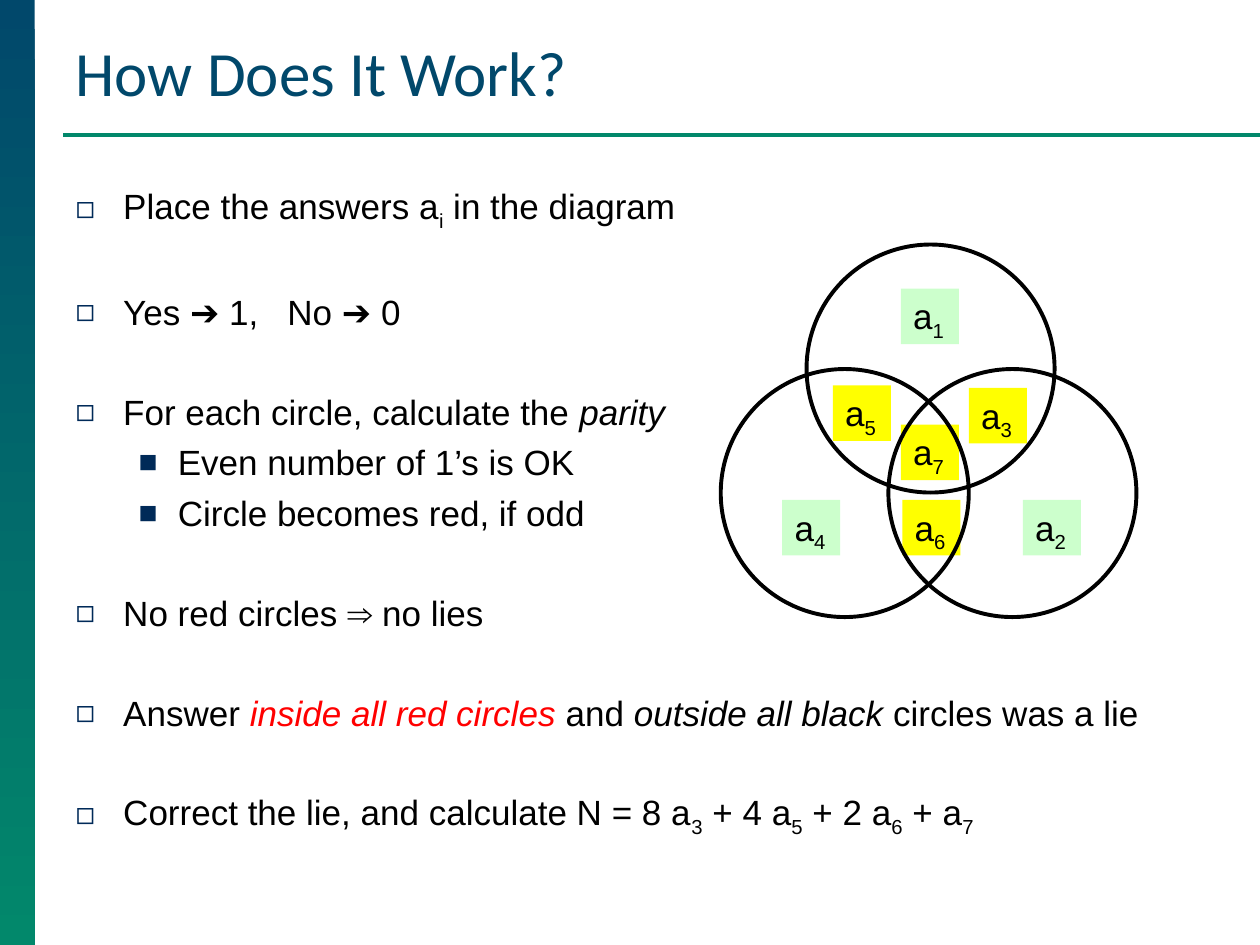
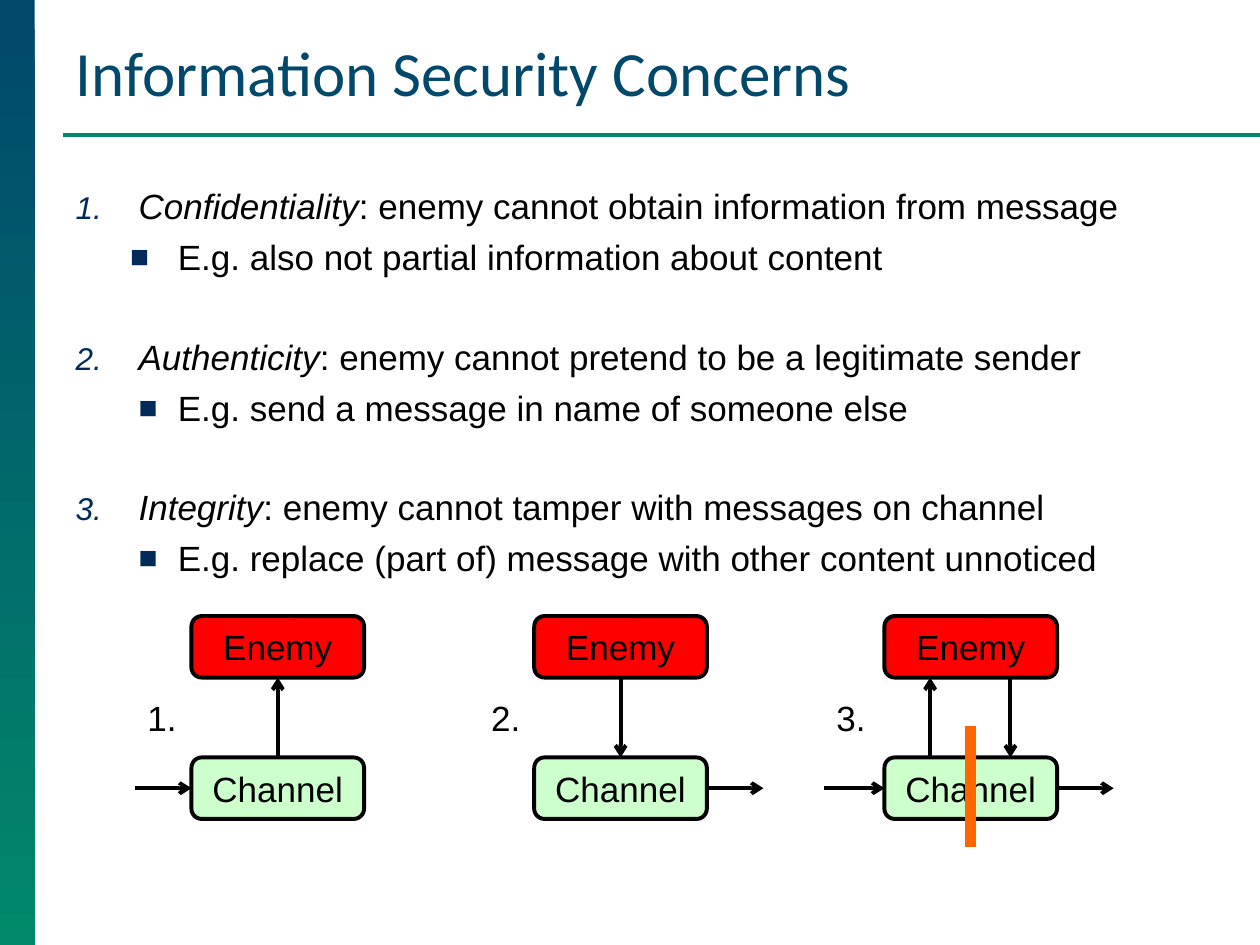
from dataclasses import dataclass

from lxml import etree
from pptx import Presentation
from pptx.dml.color import RGBColor
from pptx.enum.shapes import MSO_CONNECTOR, MSO_SHAPE
from pptx.enum.text import MSO_ANCHOR, MSO_AUTO_SIZE, PP_ALIGN
from pptx.oxml.ns import qn
from pptx.util import Cm, Pt


@dataclass(frozen=True)
class Theme:
    navy: RGBColor = RGBColor.from_string("01486B")
    green: RGBColor = RGBColor.from_string("02886B")
    black: RGBColor = RGBColor.from_string("000000")
    red: RGBColor = RGBColor.from_string("FF0000")
    mint: RGBColor = RGBColor.from_string("CCFFCC")
    yellow: RGBColor = RGBColor.from_string("FFFF00")
    orange: RGBColor = RGBColor.from_string("FF6600")
    bullet: str = "002A58"
    title_font: str = "Calibri"
    text_font: str = "Arial"
    title_size: Pt = Pt(36)
    text_size: Pt = Pt(20)
    line_width: Pt = Pt(2.25)
    row_gap: Pt = Pt(5)
    group_gap: Pt = Pt(33)


theme = Theme()
TOP, LEFT, BOTTOM, RIGHT = range(4)


def write_runs(para, runs):
    """Fill a paragraph with (text, style) pairs; style is "", "sub", "italic" or "red"."""
    para.font.name = theme.text_font
    para.font.size = theme.text_size
    para.font.color.rgb = theme.black
    for text, style in runs:
        span = para.add_run()
        span.text = text
        if style == "sub":
            span.font._element.set("baseline", "-25000")
        elif style:
            span.font.italic = True
        if style == "red":
            span.font.color.rgb = theme.red


def draw_line(page, start, end, color=theme.black, width=theme.line_width, arrow=True):
    """Draw a straight line between two points in centimetres."""
    line = page.shapes.add_connector(
        MSO_CONNECTOR.STRAIGHT, *(Cm(value) for value in (*start, *end)))
    line.line.color.rgb = color
    line.line.width = width
    properties = line._element.spPr
    if arrow:
        etree.SubElement(properties.find(qn("a:ln")), qn("a:tailEnd"), type="arrow")
    etree.SubElement(properties, qn("a:effectLst"))
    return line


# Each row: level, starts a group, bullet, indent and hanging in cm, runs
ITEM = (0, True, "◻", 0.96, 0.96)
SUBITEM = (1, False, "■", 2.06, 0.79)
WIDE_SUBITEM = (1, False, "■", 2.06, 0.96)
NUMBERED = (0, True, "1.", 1.27, 1.27)

slides = [
    ("How Does It Work?", [
        (ITEM, [("Place the answers a", ""), ("i", "sub"), (" in the diagram", "")]),
        (ITEM, [("Yes ➔ 1,\tNo ➔ 0", "")]),
        (ITEM, [("For each circle, calculate the ", ""), ("parity", "italic")]),
        (SUBITEM, [("Even number of 1’s is OK", "")]),
        (SUBITEM, [("Circle becomes red, if odd", "")]),
        (ITEM, [("No red circles ⇒ no lies", "")]),
        (ITEM, [("Answer ", ""), ("inside all red circles ", "red"), ("and ", ""),
                ("outside all black ", "italic"), ("circles was a lie", "")]),
        (ITEM, [("Correct the lie, and calculate N = 8 a", ""), ("3", "sub"),
                (" + 4 a", ""), ("5", "sub"), (" + 2 a", ""), ("6", "sub"),
                (" + a", ""), ("7", "sub")]),
    ]),
    ("Information Security Concerns", [
        (NUMBERED, [("Confidentiality", "italic"),
                    (": enemy cannot obtain information from message", "")]),
        (WIDE_SUBITEM, [("E.g. also not partial information about content", "")]),
        (NUMBERED, [("Authenticity", "italic"),
                    (": enemy cannot pretend to be a legitimate sender", "")]),
        (SUBITEM, [("E.g. send a message in name of someone else", "")]),
        (NUMBERED, [("Integrity", "italic"),
                    (": enemy cannot tamper with messages on channel", "")]),
        (SUBITEM, [("E.g. replace (part of) message with other content unnoticed", "")]),
    ]),
]

deck = Presentation()
deck.slide_width, deck.slide_height = Cm(25.4), Cm(19.05)

# Frame, title and list of every slide
for title_text, rows in slides:
    page = deck.slides.add_slide(deck.slide_layouts[1])

    band = page.shapes.add_shape(MSO_SHAPE.RECTANGLE, 0, 0, Cm(0.7), deck.slide_height)
    band.shadow.inherit = False
    band.line.fill.background()
    band.fill.gradient()
    band.fill.gradient_angle = 270
    for stop, color in zip(band.fill.gradient_stops, (theme.navy, theme.green)):
        stop.color.rgb = color
    draw_line(page, (1.27, 2.72), (25.4, 2.72), theme.green, arrow=False)

    title = page.shapes.title
    title.left, title.top, title.width, title.height = Cm(1.27), Cm(0.53), Cm(24), Cm(1.8)
    title.text_frame.text = title_text
    title.text_frame.vertical_anchor = MSO_ANCHOR.BOTTOM
    title.text_frame.auto_size = MSO_AUTO_SIZE.NONE
    para = title.text_frame.paragraphs[0]
    para.alignment = PP_ALIGN.LEFT
    para.font.name = theme.title_font
    para.font.size = theme.title_size
    para.font.color.rgb = theme.navy

    body = page.placeholders[1]
    body.left, body.top, body.width, body.height = Cm(1.27), Cm(3.6), Cm(22.66), Cm(13.93)
    frame = body.text_frame
    frame.auto_size = MSO_AUTO_SIZE.NONE
    for index, ((level, new_group, bullet, indent, hanging), runs) in enumerate(rows):
        para = frame.add_paragraph() if index else frame.paragraphs[0]
        para.level = level
        para.space_before = theme.group_gap if new_group else theme.row_gap
        if index == 0:
            para.space_before = Pt(0)
        properties = para._p.get_or_add_pPr()
        properties.set("marL", str(Cm(indent)))
        properties.set("indent", str(-Cm(hanging)))
        bullet_color = etree.SubElement(properties, qn("a:buClr"))
        etree.SubElement(bullet_color, qn("a:srgbClr"), val=theme.bullet)
        etree.SubElement(properties, qn("a:buSzPct"), val="90000")
        etree.SubElement(properties, qn("a:buFont"), typeface=theme.text_font)
        if bullet == "1.":
            etree.SubElement(properties, qn("a:buAutoNum"), type="arabicPeriod")
        else:
            etree.SubElement(properties, qn("a:buChar"), char=bullet)
        if any("\t" in text for text, _ in runs):
            tabs = etree.SubElement(properties, qn("a:tabLst"))
            etree.SubElement(tabs, qn("a:tab"), pos=str(Cm(4.27)), algn="l")
        write_runs(para, runs)

venn_page, security_page = deck.slides

# Three overlapping circles with the answers in their regions
answers = [
    ("2", 20.62, 10.08, theme.mint), ("1", 18.16, 5.82, theme.mint),
    ("4", 15.77, 10.08, theme.mint), ("7", 18.16, 8.56, theme.yellow),
    ("5", 16.79, 7.77, theme.yellow), ("6", 18.19, 10.08, theme.yellow),
    ("3", 19.53, 7.82, theme.yellow),
]
for number, left, top, color in answers:
    box = venn_page.shapes.add_textbox(Cm(left), Cm(top), Cm(1.17), Cm(1.12))
    box.fill.solid()
    box.fill.fore_color.rgb = color
    box.text_frame.word_wrap = False
    write_runs(box.text_frame.paragraphs[0], [("a", ""), (number, "sub")])

for left, top in [(16.26, 4.93), (14.53, 7.44), (17.91, 7.44)]:
    circle = venn_page.shapes.add_shape(MSO_SHAPE.OVAL, Cm(left), Cm(top), Cm(5), Cm(5))
    circle.shadow.inherit = False
    circle.fill.background()
    circle.line.color.rgb = theme.black
    circle.line.width = theme.line_width

# One enemy and channel scheme per concern
BOX_WIDTH, BOX_HEIGHT = 3.48, 1.24
ENEMY_TOP, CHANNEL_TOP = 12.42, 15.27
enemy_bottom = ENEMY_TOP + BOX_HEIGHT
flow_y = CHANNEL_TOP + BOX_HEIGHT / 2
schemes = [
    ("1.", 3.86, 2.72, "read"), ("2.", 10.77, 9.65, "send"), ("3.", 17.83, 16.61, "replace"),
]
for label, left, label_left, attack in schemes:
    boxes = []
    for name, top, color in [("Channel", CHANNEL_TOP, theme.mint),
                             ("Enemy", ENEMY_TOP, theme.red)]:
        box = security_page.shapes.add_shape(
            MSO_SHAPE.ROUNDED_RECTANGLE, Cm(left), Cm(top), Cm(BOX_WIDTH), Cm(BOX_HEIGHT))
        box.shadow.inherit = False
        box.fill.solid()
        box.fill.fore_color.rgb = color
        box.line.color.rgb = theme.black
        box.line.width = theme.line_width
        para = box.text_frame.paragraphs[0]
        para.alignment = PP_ALIGN.CENTER
        write_runs(para, [(name, "")])
        boxes.append(box)
    channel, enemy = boxes

    middle, right = left + BOX_WIDTH / 2, left + BOX_WIDTH
    if attack == "replace":
        draw_line(security_page, (left + 0.92, CHANNEL_TOP), (left + 0.92, enemy_bottom))
        draw_line(security_page, (left + 2.54, enemy_bottom), (left + 2.54, CHANNEL_TOP))
        draw_line(security_page, (middle, 14.63), (middle, 17.07),
                  theme.orange, Pt(6), arrow=False)
    else:
        tap = draw_line(security_page, (middle, CHANNEL_TOP), (middle, enemy_bottom))
        if attack == "read":
            tap.begin_connect(channel, TOP)
            tap.end_connect(enemy, BOTTOM)
        else:
            tap.begin_connect(enemy, BOTTOM)
            tap.end_connect(channel, TOP)
    if attack != "send":
        inflow = draw_line(security_page, (label_left, flow_y), (left, flow_y))
        inflow.end_connect(channel, LEFT)
    if attack != "read":
        outflow = draw_line(security_page, (right, flow_y), (right + 1.14, flow_y))
        outflow.begin_connect(channel, RIGHT)

    box = security_page.shapes.add_textbox(Cm(label_left), Cm(13.92), Cm(1.12), Cm(1.12))
    box.text_frame.word_wrap = False
    write_runs(box.text_frame.paragraphs[0], [(label, "")])

deck.save("out.pptx")
